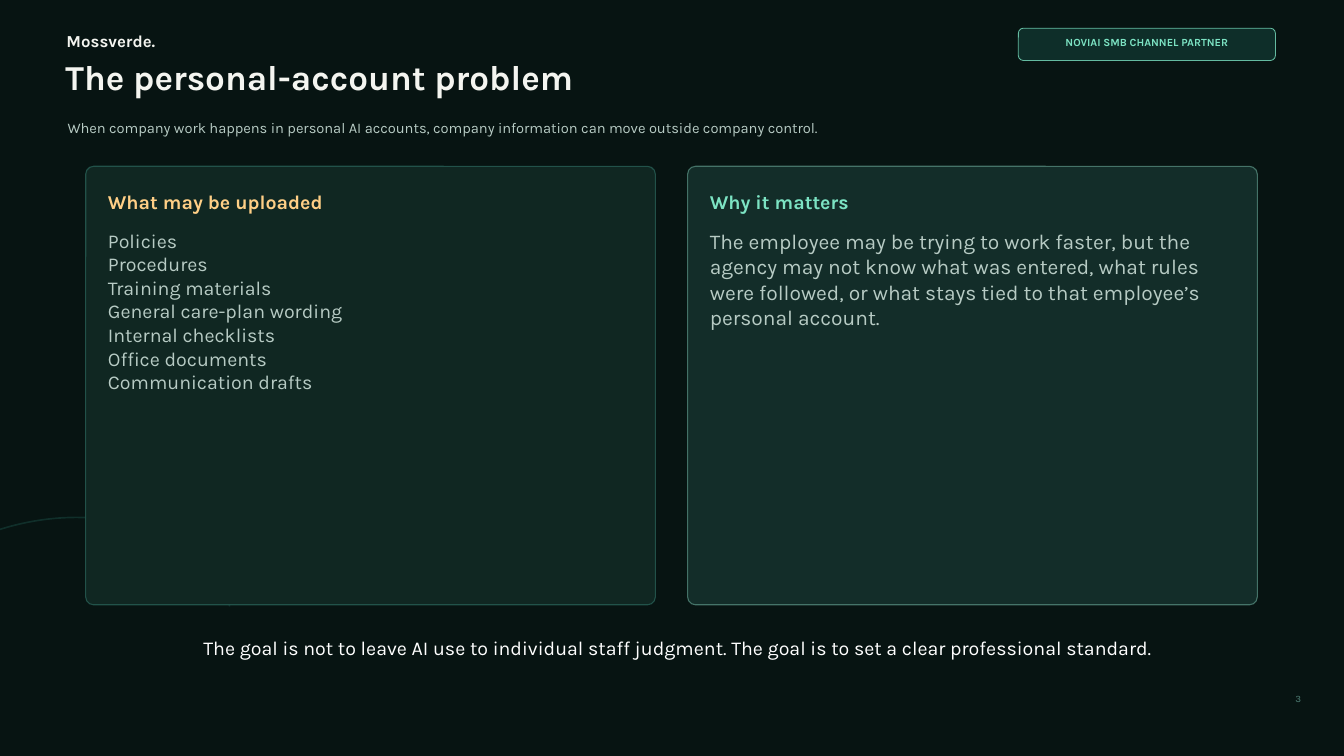
from dataclasses import dataclass

from lxml.etree import SubElement
from pptx import Presentation
from pptx.dml.color import RGBColor
from pptx.dml.fill import FillFormat
from pptx.enum.shapes import MSO_SHAPE as Geometry
from pptx.enum.text import MSO_ANCHOR as Anchor, PP_ALIGN as Align
from pptx.oxml.ns import qn
from pptx.shapes.autoshape import Shape
from pptx.slide import Slide
from pptx.util import Inches, Pt

FONT = "Karla"
NIGHT = RGBColor(0x07, 0x14, 0x12)
WHITE = RGBColor(0xFF, 0xFF, 0xFF)
IVORY = RGBColor(0xF4, 0xF5, 0xF0)
SAGE = RGBColor(0xB7, 0xCB, 0xC4)
MINT = RGBColor(0x7C, 0xE3, 0xC3)
AMBER = RGBColor(0xFF, 0xCF, 0x86)
PAGE_GREEN = RGBColor(0x4E, 0x7D, 0x73)
BADGE_FILL = RGBColor(0x0F, 0x2F, 0x2A)
UPPER_ARC = RGBColor(0x18, 0x44, 0x3D)
LOWER_ARC = RGBColor(0x12, 0x32, 0x2D)
LEFT_FILL = RGBColor(0x10, 0x27, 0x22)
LEFT_LINE = RGBColor(0x25, 0x58, 0x4F)
RIGHT_FILL = RGBColor(0x13, 0x2D, 0x29)
RIGHT_LINE = RGBColor(0x4B, 0x7C, 0x70)

Box = tuple[float, float, float, float]

CARD_LEFT, CARD_TOP, CARD_WIDTH, CARD_HEIGHT = 0.85, 1.65, 5.65, 4.35
CARD_STEP = 5.97
CARD_PADDING = 0.22


@dataclass
class Label:
    box: Box
    lines: list[str]
    size: float
    color: RGBColor
    bold: bool = False
    align: Align | None = None
    anchor: Anchor = Anchor.MIDDLE
    inset: Box = (0, 0, 0, 0)


@dataclass
class Outline:
    geometry: Geometry
    box: Box
    line: RGBColor
    line_width: float
    line_opacity: int
    fill: RGBColor | None = None
    fill_opacity: int = 100
    rounding: float | None = None
    rotation: float = 0


@dataclass
class Card:
    heading: str
    heading_color: RGBColor
    body: list[str]
    body_size: float
    fill: RGBColor
    line: RGBColor


ARCS = [
    Outline(Geometry.ARC, (9.4, -1.2, 5, 4.2), UPPER_ARC, 1.2, 70, rotation=25),
    Outline(Geometry.ARC, (-1.6, 5.2, 4, 3), LOWER_ARC, 1.2, 90, rotation=340),
]

BADGE = Outline(Geometry.ROUNDED_RECTANGLE, (10.1, 0.28, 2.55, 0.32), MINT, 0.6, 80,
                BADGE_FILL, 98, rounding=0.156)

HEADER = [
    Label((0.66, 0.28, 1.8, 0.25), ["Mossverde."], 12, IVORY, bold=True),
    Label((10.2, 0.34, 2.35, 0.16), ["NOVIAI SMB CHANNEL PARTNER"], 7.8, MINT,
          bold=True, align=Align.CENTER),
    Label((0.65, 0.48, 9.6, 0.55), ["The personal-account problem"], 25, IVORY, bold=True),
    Label((0.67, 1.09, 8.9, 0.35),
          ["When company work happens in personal AI accounts, "
           "company information can move outside company control."], 10.5, SAGE),
]

CARDS = [
    Card("What may be uploaded", AMBER,
         ["Policies", "Procedures", "Training materials", "General care-plan wording",
          "Internal checklists", "Office documents", "Communication drafts"],
         14, LEFT_FILL, LEFT_LINE),
    Card("Why it matters", MINT,
         ["The employee may be trying to work faster, but the agency may not know what "
          "was entered, what rules were followed, or what stays tied to that employee’s "
          "personal account."],
         15, RIGHT_FILL, RIGHT_LINE),
]

FOOTER = [
    Label((0.9, 6.25, 11.7, 0.35),
          ["The goal is not to leave AI use to individual staff judgment. "
           "The goal is to set a clear professional standard. "],
          14, WHITE, align=Align.CENTER),
    Label((12.75, 6.82, 0.5, 0.33), ["3"], 7, PAGE_GREEN,
          anchor=Anchor.TOP, inset=(0.1, 0.05, 0.1, 0.05)),
]


def paint(fill: FillFormat, color: RGBColor) -> None:
    fill.solid()
    fill.fore_color.rgb = color


def set_opacity(parent, percent: int) -> None:
    """Add an alpha value to the solid fill directly under the parent element."""
    if percent < 100:
        color = parent.find(qn("a:solidFill")).find(qn("a:srgbClr"))
        SubElement(color, qn("a:alpha")).set("val", str(percent * 1000))


def draw_outline(slide: Slide, outline: Outline) -> Shape:
    shape = slide.shapes.add_shape(outline.geometry, *map(Inches, outline.box))
    shape.shadow.inherit = False
    shape.rotation = outline.rotation
    if outline.rounding is not None:
        shape.adjustments[0] = outline.rounding
    properties = shape.element.spPr
    if outline.fill is None:
        shape.fill.background()
    else:
        paint(shape.fill, outline.fill)
        set_opacity(properties, outline.fill_opacity)
    paint(shape.line.fill, outline.line)
    shape.line.width = Pt(outline.line_width)
    set_opacity(properties.find(qn("a:ln")), outline.line_opacity)
    return shape


def draw_label(slide: Slide, label: Label) -> Shape:
    shape = slide.shapes.add_textbox(*map(Inches, label.box))
    text_frame = shape.text_frame
    text_frame.word_wrap = True
    text_frame.vertical_anchor = label.anchor
    (text_frame.margin_left, text_frame.margin_top,
     text_frame.margin_right, text_frame.margin_bottom) = map(Inches, label.inset)
    text_frame.text = "\n".join(label.lines)
    for paragraph in text_frame.paragraphs:
        paragraph.alignment = label.align
        for run in paragraph.runs:
            run.font.name = FONT
            run.font.size = Pt(label.size)
            run.font.bold = label.bold
            run.font.color.rgb = label.color
    return shape


def draw_card(slide: Slide, card: Card, left: float) -> None:
    draw_outline(slide, Outline(
        Geometry.ROUNDED_RECTANGLE, (left, CARD_TOP, CARD_WIDTH, CARD_HEIGHT),
        card.line, 0.8, 90, card.fill, rounding=0.018))
    text_left = left + CARD_PADDING
    text_width = CARD_WIDTH - 2 * CARD_PADDING
    draw_label(slide, Label((text_left, CARD_TOP + 0.18, text_width, 0.35),
                            [card.heading], 14, card.heading_color, bold=True))
    draw_label(slide, Label((text_left, CARD_TOP + 0.62, text_width, 3.53),
                            card.body, card.body_size, SAGE, anchor=Anchor.TOP))


def main() -> None:
    presentation = Presentation()
    presentation.slide_width = Inches(13.33)
    presentation.slide_height = Inches(7.5)
    slide = presentation.slides.add_slide(presentation.slide_layouts[6])
    paint(slide.background.fill, NIGHT)

    # Background arcs and partner badge
    for outline in [*ARCS, BADGE]:
        draw_outline(slide, outline)

    # Brand, badge text, title and subtitle
    for label in HEADER:
        draw_label(slide, label)

    # Two cards side by side
    for index, card in enumerate(CARDS):
        draw_card(slide, card, CARD_LEFT + index * CARD_STEP)

    # Closing statement and page number
    for label in FOOTER:
        draw_label(slide, label)

    presentation.save("out.pptx")


if __name__ == "__main__":
    main()
